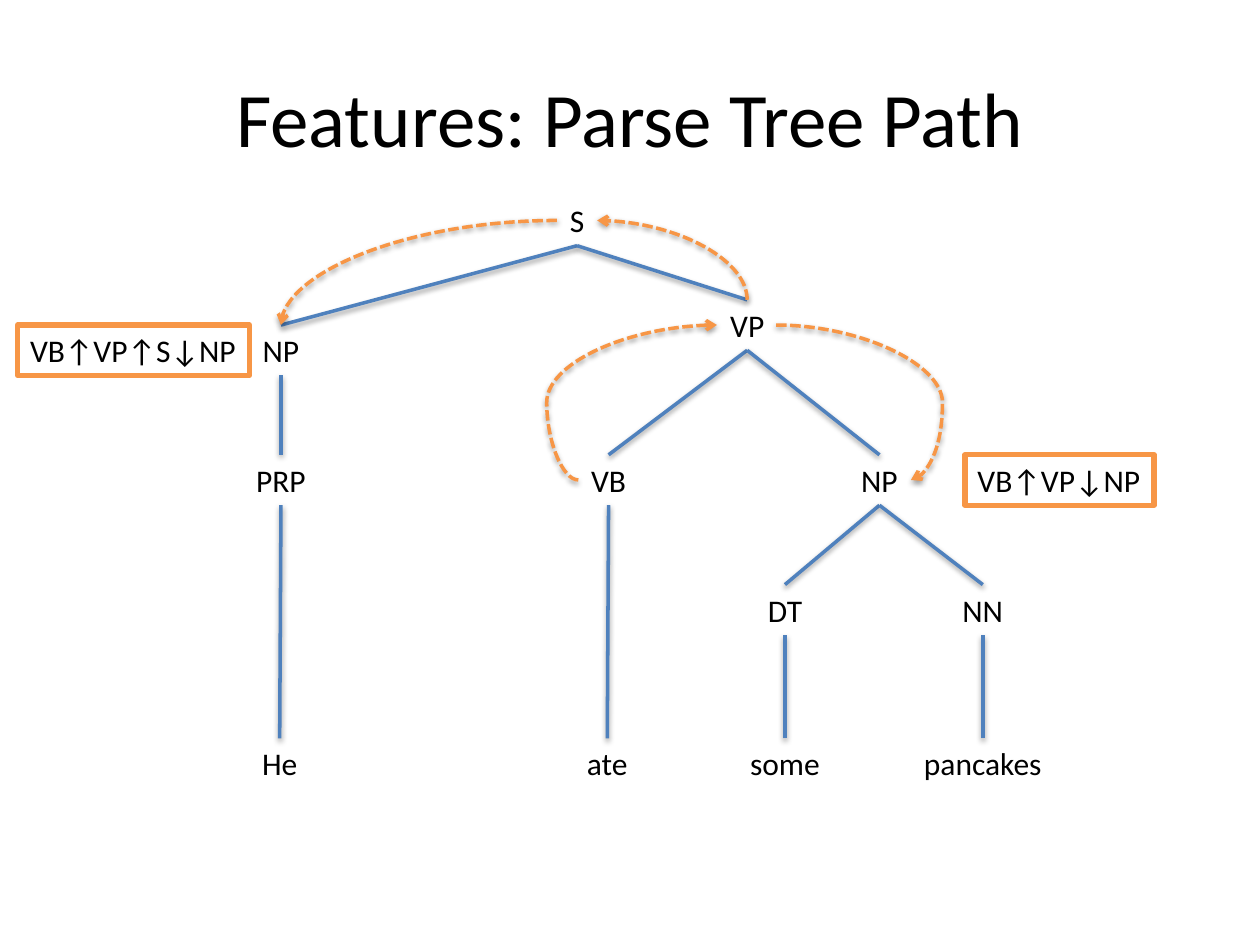
import pptx
import pptx.util
import pptx.dml.color
import pptx.enum.dml
import pptx.enum.shapes
import pptx.enum.text
import pptx.oxml
import pptx.oxml.ns
from dataclasses import dataclass

Inches, Pt = pptx.util.Inches, pptx.util.Pt
Kind = pptx.enum.shapes.MSO_CONNECTOR
Align, Anchor = pptx.enum.text.PP_ALIGN, pptx.enum.text.MSO_ANCHOR
qn = pptx.oxml.ns.qn
SHADE = (
    '<a:effectLst %s><a:outerShdw blurRad="40000" dist="20000" dir="5400000" '
    'rotWithShape="0"><a:srgbClr val="000000"><a:alpha val="38000"/></a:srgbClr>'
    '</a:outerShdw></a:effectLst>' % pptx.oxml.ns.nsdecls("a"))


@dataclass
class Theme:
    font: str = "Calibri"
    ink: str = "000000"
    branch: str = "4F81BD"
    trail: str = "F79646"
    head: int = 44
    body: int = 18
    thin: int = 2
    thick: int = 3


def color(value):
    return pptx.dml.color.RGBColor.from_string(value)


def write(frame, text, size, font, ink, align=Align.CENTER, wrap=False):
    """Fill a text frame with one formatted line."""
    frame.word_wrap = wrap
    if not wrap:
        frame.auto_size = pptx.enum.text.MSO_AUTO_SIZE.SHAPE_TO_FIT_TEXT
    frame.vertical_anchor = Anchor.MIDDLE if wrap else Anchor.TOP
    para = frame.paragraphs[0]
    para.alignment = align
    run = para.add_run()
    run.text = text
    run.font.size, run.font.name = Pt(size), font
    run.font.color.rgb = color(ink)


class Page:
    def __init__(self, slide, theme):
        self.shapes, self.theme = slide.shapes, theme

    def text(self, text, box, size=None, **form):
        t = self.theme
        shape = self.shapes.add_textbox(*map(Inches, box))
        write(shape.text_frame, text, size or t.body, t.font, t.ink, **form)

    def frame(self, text, box):
        t = self.theme
        shape = self.shapes.add_shape(
            pptx.enum.shapes.MSO_SHAPE.RECTANGLE, *map(Inches, box))
        shape.shadow.inherit = False
        shape.fill.background()
        shape.line.color.rgb = color(t.trail)
        shape.line.width = Pt(t.thick)
        write(shape.text_frame, text, t.body, t.font, t.ink, align=Align.LEFT)

    def line(self, start, end, ink=None, kind=Kind.STRAIGHT):
        line = self.shapes.add_connector(kind, *map(Inches, (*start, *end)))
        line.line.color.rgb = color(ink or self.theme.branch)
        line.line.width = Pt(self.theme.thin)
        line.element.spPr.append(pptx.oxml.parse_xml(SHADE))
        return line

    def curve(self, start, end, bend=None, turn=False):
        """Dashed arrow; bend sets a three-part curve, turn leaves upright."""
        if turn:
            mid = [(a + b) / 2 for a, b in zip(start, end)]
            wide, high = (abs(start[i] - end[i]) / 2 for i in (1, 0))
            start = mid[0] - wide, mid[1] + high
            end = mid[0] + wide, mid[1] - high
        line = self.line(start, end, self.theme.trail, Kind.CURVE)
        line.line.dash_style = pptx.enum.dml.MSO_LINE.SQUARE_DOT
        props = line.element.spPr
        if turn:
            props.find(qn("a:xfrm")).set("rot", str(270 * 60000))
        shape = props.find(qn("a:prstGeom"))
        if bend is None:
            shape.set("prst", "curvedConnector2")
        else:
            guide = shape.get_or_add_avLst().makeelement(
                qn("a:gd"), {"name": "adj1", "fmla": f"val {round(bend * 100000)}"})
            shape.get_or_add_avLst().append(guide)
        stroke = props.find(qn("a:ln"))
        stroke.append(stroke.makeelement(qn("a:tailEnd"), {"type": "arrow"}))


deck = pptx.Presentation()
deck.slide_width, deck.slide_height = Inches(10), Inches(7.5)
theme = Theme()
page = Page(deck.slides.add_slide(deck.slide_layouts[6]), theme)

# Title
page.text("Features: Parse Tree Path", (0.5, 0.3, 9, 1.25), theme.head, wrap=True)

# Parse tree: key, word, centre, top, width, parent
HIGH = 0.4
NODES = [
    ("s", "S", 4.58, 1.55, 0.32, None),
    ("subj", "NP", 2.23, 2.58, 0.5, "s"),
    ("vp", "VP", 5.93, 2.38, 0.48, "s"),
    ("prp", "PRP", 2.23, 3.61, 0.6, "subj"),
    ("vb", "VB", 4.83, 3.61, 0.48, "vp"),
    ("obj", "NP", 6.98, 3.61, 0.5, "vp"),
    ("dt", "DT", 6.23, 4.64, 0.48, "obj"),
    ("nn", "NN", 7.8, 4.64, 0.53, "obj"),
    ("he", "He", 2.22, 5.86, 0.48, "prp"),
    ("ate", "ate", 4.82, 5.86, 0.53, "vb"),
    ("some", "some", 6.23, 5.86, 0.76, "dt"),
    ("cakes", "pancakes", 7.8, 5.86, 1.14, "nn"),
]
foot = {}
for key, word, mid, top, wide, parent in NODES:
    page.text(word, (mid - wide / 2, top, wide, HIGH))
    foot[key] = mid, top + HIGH
    if parent:
        page.line((mid, top), foot[parent])

# Paths through the tree
page.curve((4.59, 3.81), (5.69, 2.58), bend=-0.228)
page.curve((5.93, 2.38), (4.74, 1.75), turn=True)
page.curve((4.42, 1.75), (2.23, 2.58))
page.curve((6.16, 2.58), (7.23, 3.81), bend=1.234)

# Path labels
page.frame("VB↑VP↑S↓NP", (0.14, 2.58, 1.84, HIGH))
page.frame("VB↑VP↓NP", (7.66, 3.61, 1.5, HIGH))

deck.save("out.pptx")
